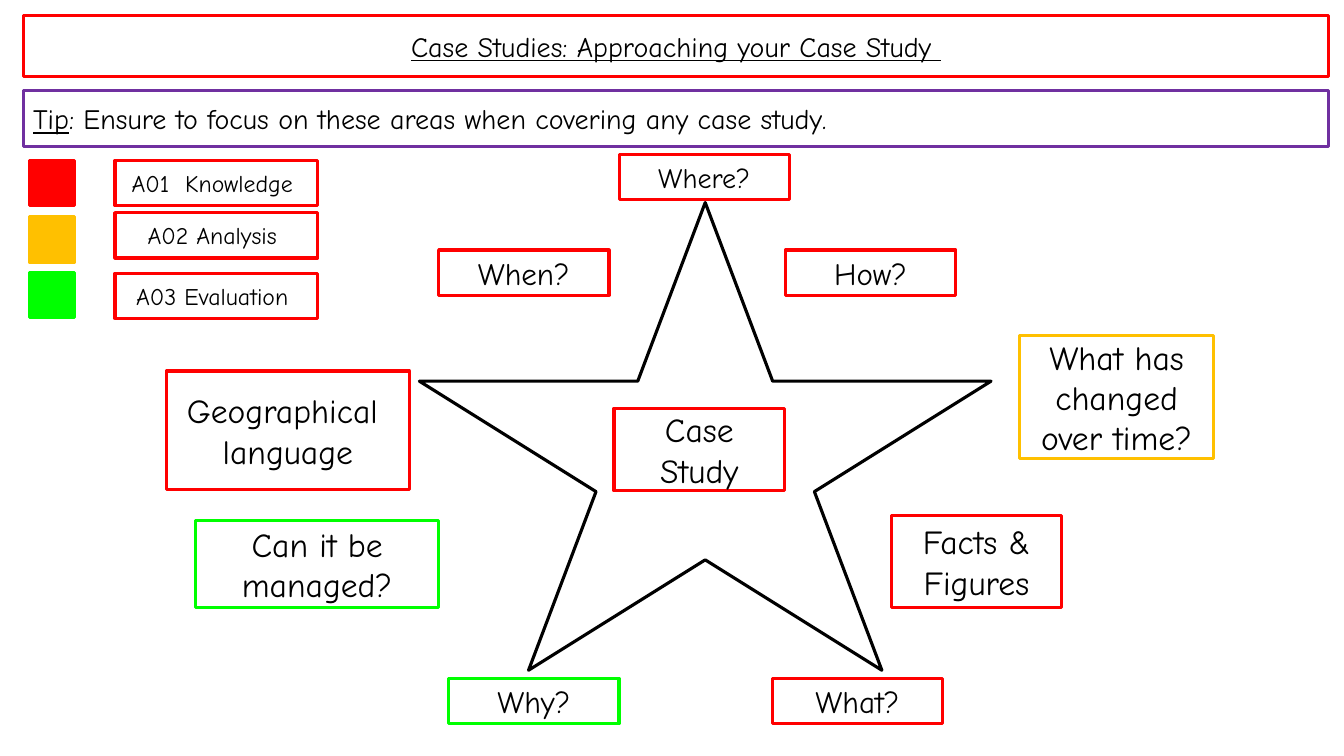
from pptx import Presentation
from pptx.dml.color import RGBColor
from pptx.enum.shapes import MSO_SHAPE
from pptx.enum.text import MSO_ANCHOR, MSO_AUTO_SIZE, PP_ALIGN
from pptx.util import Emu, Pt

PX = 9144  # 100 px to the inch
RECTANGLE, STAR = MSO_SHAPE.RECTANGLE, MSO_SHAPE.STAR_5_POINT
MIDDLE, FIXED = MSO_ANCHOR.MIDDLE, MSO_AUTO_SIZE.NONE
LEFT, CENTER = PP_ALIGN.LEFT, PP_ALIGN.CENTER
TITLE_ONLY = 5
FONT = "Comic Neue"
COLORS = {
    "red": "FF0000", "amber": "FFC000", "green": "00FF00",
    "purple": "7030A0", "black": "000000", "white": "FFFFFF",
}

# text, assessment colour, size, box relative to the star's box
PROMPTS = [
    ("Where?", "red", 20, (198, -48, 169, 45)),
    ("When?", "red", 22.2, (19, 47, 169, 45)),
    ("How?", "red", 22.2, (363, 47, 169, 45)),
    ("Why?", "green", 22.2, (29, 472, 169, 45)),
    ("What?", "red", 22.2, (350, 472, 169, 45)),
    ("Facts & Figures", "red", 24, (468, 310, 169, 92)),
    ("Geographical \nlanguage", "red", 24, (-251, 167, 241, 118)),
    ("Can it be managed?", "green", 24, (-222, 315, 241, 87)),
    ("What has changed over time?", "amber", 24, (595, 132, 193, 122)),
    ("Case Study", "red", 24, (193, 204, 169, 82)),
]
# label, key colour, label offset, square offset
OBJECTIVES = [
    ("A01  Knowledge ", "red", 0, 0),
    ("A02 Analysis ", "amber", 52, 56),
    ("A03 Evaluation ", "green", 112, 111),
]


def rgb(name):
    return RGBColor.from_string(COLORS[name])


def set_all(target, values):
    for name, value in values.items():
        setattr(target, name, value)


def outline(shape, color, fill=None):
    shape.line.color.rgb = rgb(color)
    shape.line.width = Pt(2.25)
    if fill:
        shape.fill.solid()
        shape.fill.fore_color.rgb = rgb(fill)
    else:
        shape.fill.background()


def add_figure(page, kind, box, color, fill=None):
    shape = page.shapes.add_shape(kind, *(Emu(n * PX) for n in box))
    shape.shadow.inherit = False
    outline(shape, color, fill)
    return shape


def write(shape, paragraphs, size, align=CENTER):
    """Fill the shape with paragraphs, each a list of (text, underlined) spans."""
    frame = shape.text_frame
    set_all(frame, {"word_wrap": True, "auto_size": FIXED, "vertical_anchor": MIDDLE})
    for index, spans in enumerate(paragraphs):
        para = frame.add_paragraph() if index else frame.paragraphs[0]
        para.alignment = align
        for text, underlined in spans:
            span = para.add_run()
            span.text = text
            set_all(span.font, {"name": FONT, "size": Pt(size), "underline": underlined})
            span.font.color.rgb = rgb("black")


def add_label(page, box, text, color, size):
    label = add_figure(page, RECTANGLE, box, color)
    write(label, [[(line, False)] for line in text.split("\n")], size)


def place_title(page, box):
    title = page.shapes.title
    set_all(title, dict(zip(("left", "top", "width", "height"), (Emu(n * PX) for n in box))))
    outline(title, "red")
    write(title, [[("Case Studies: Approaching your Case Study ", True)]], 20)


def add_tip(page, box):
    tip = add_figure(page, RECTANGLE, box, "purple")
    advice = ": Ensure to focus on these areas when covering any case study."
    write(tip, [[("Tip", True), (advice, False)]], 20, LEFT)


def add_key(page, left, top):
    for text, color, label_drop, square_drop in OBJECTIVES:
        add_figure(page, RECTANGLE, (left, top + square_drop, 45, 45), color, color)
        add_label(page, (left + 85, top + label_drop, 201, 45), text, "red", 17)


def add_star_map(page, box):
    """Draw the star and the prompts in and around it."""
    add_figure(page, STAR, box, "black", "white")
    left, top = box[:2]
    for text, color, size, (x, y, width, height) in PROMPTS:
        add_label(page, (left + x, top + y, width, height), text, color, size)


def main():
    deck = Presentation()
    set_all(deck, {"slide_width": Emu(1333 * PX), "slide_height": Emu(750 * PX)})
    page = deck.slides.add_slide(deck.slide_layouts[TITLE_ONLY])
    place_title(page, (23, 15, 1295, 61))
    add_star_map(page, (416, 201, 567, 464))
    add_key(page, 29, 159)
    add_tip(page, (23, 90, 1295, 55))
    deck.save("out.pptx")


if __name__ == "__main__":
    main()
